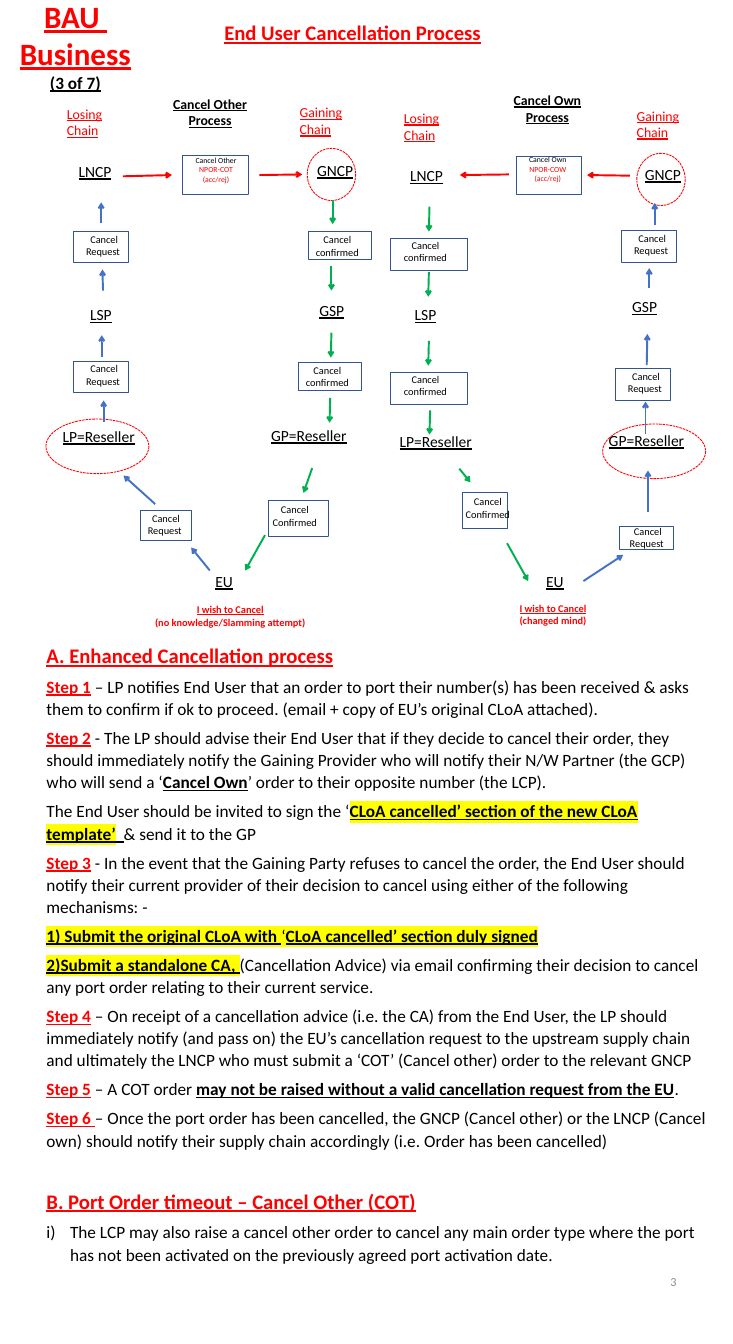
from lxml import etree
from pptx import Presentation
from pptx.dml.color import RGBColor
from pptx.enum.dml import MSO_LINE
from pptx.enum.shapes import MSO_CONNECTOR, MSO_SHAPE
from pptx.enum.text import MSO_ANCHOR, MSO_AUTO_SIZE, PP_ALIGN
from pptx.oxml.ns import qn
from pptx.util import Inches, Pt

LEFT, CENTER, RIGHT = PP_ALIGN.LEFT, PP_ALIGN.CENTER, PP_ALIGN.RIGHT
RECT, OVAL = MSO_SHAPE.RECTANGLE, MSO_SHAPE.OVAL
TOP, MIDDLE = MSO_ANCHOR.TOP, MSO_ANCHOR.MIDDLE
FONT = "Calibri"
COLORS = {"red": "FF0000", "black": "000000", "blue": "4472C4", "green": "00B050",
          "navy": "325491", "grey": "8C8C8C", "yellow": "FFFF00"}
HEAD = {"size": 24, "color": "red", "bold": True, "underline": True}
STEP = {"color": "red", "bold": True, "underline": True}
KEY = {"bold": True, "underline": True}
MARK = {**KEY, "highlight": "yellow"}

prs = Presentation()
prs.slide_width, prs.slide_height = Inches(11.81), Inches(21.65)
s = prs.slides.add_slide(prs.slide_layouts[6])


def add_text(box, paragraphs, align=CENTER, wrap=True, anchor=TOP, spacing=None, after=0, **base):
    """Each paragraph is a string or a list of (text, format) runs; base is the default format."""
    sp = s.shapes.add_textbox(*map(Inches, box))
    tf = sp.text_frame
    tf.word_wrap, tf.auto_size, tf.vertical_anchor = wrap, MSO_AUTO_SIZE.SHAPE_TO_FIT_TEXT, anchor
    for i, runs in enumerate(paragraphs):
        p = tf.paragraphs[0] if i == 0 else tf.add_paragraph()
        p.alignment = align
        if spacing:
            p.line_spacing, p.space_after = spacing, Pt(after)
        for text, extra in [(runs, {})] if isinstance(runs, str) else runs:
            fmt = {"size": 12, "color": "black", **base, **extra}
            r = p.add_run()
            r.text = text
            r.font.size = Pt(fmt["size"])
            r.font.bold = fmt.get("bold", False)
            r.font.underline = fmt.get("underline", False)
            r.font.color.rgb = RGBColor.from_string(COLORS[fmt["color"]])
            if "highlight" in fmt:
                mark = etree.SubElement(r.font._element, qn("a:highlight"))
                etree.SubElement(mark, qn("a:srgbClr"), val=COLORS[fmt["highlight"]])
            r.font.name = FONT
    return tf


def add_outline(kind, box, color, width):
    sp = s.shapes.add_shape(kind, *map(Inches, box))
    sp.shadow.inherit = False
    sp.fill.background()
    sp.line.color.rgb = RGBColor.from_string(COLORS[color])
    sp.line.width = Pt(width)
    return sp


# Headings
add_text((0.21, -0.09, 2.01, 1.65),
         ["BAU ", "Business", [("(3 of 7)", {"size": 20, "color": "black"})]],
         wrap=False, size=36, **STEP)
add_text((3.49, 0.27, 4.38, 0.5), ["End User Cancellation Process"], wrap=False, **HEAD)
for box, first in [((2.68, 1.49, 1.41, 0.64), "Cancel Other"),
                   ((8.17, 1.43, 1.3, 0.64), "Cancel Own")]:
    add_text(box, [first, "Process"], wrap=False, size=16, **KEY)
for x, y, w, side in [(0.98, 1.65, 0.78, "Losing"), (4.73, 1.63, 0.89, "Gaining"),
                      (6.41, 1.72, 0.78, "Losing"), (10.16, 1.68, 0.89, "Gaining")]:
    add_text((x, y, w, 0.64), [side, "Chain"], align=LEFT, wrap=False,
             size=16, color="red", underline=True)

# Parties in the supply chains
for x, y, w, h, party in [
        (1.17, 2.56, 0.74, 0.4, "LNCP"), (5.01, 2.54, 0.79, 0.4, "GNCP"),
        (6.51, 2.63, 0.74, 0.4, "LNCP"), (10.29, 2.61, 0.79, 0.4, "GNCP"),
        (0.91, 6.83, 1.38, 0.52, "LP=Reseller"), (4.27, 6.81, 1.43, 0.52, "GP=Reseller"),
        (6.34, 6.91, 1.38, 0.52, "LP=Reseller"), (9.71, 6.89, 1.43, 0.52, "GP=Reseller"),
        (3.37, 9.16, 0.49, 0.52, "EU"), (8.7, 9.16, 0.49, 0.52, "EU")]:
    add_text((x, y, w, h), [party], align=LEFT, wrap=False, size=18, underline=True)
for x, y, party in [(0.8, 4.87, "LSP"), (4.52, 4.8, "GSP"), (6.03, 4.87, "LSP"), (9.56, 4.74, "GSP")]:
    add_text((x, y, 1.65, 0.4), [party], size=18, underline=True)
for oval in [(0.74, 6.75, 1.66, 0.88), (9.71, 6.83, 1.66, 0.88),
             (4.95, 2.39, 0.78, 0.84), (10.26, 2.47, 0.78, 0.84)]:
    add_outline(OVAL, oval, "red", 1).line.dash_style = MSO_LINE.SQUARE_DOT

# Port order boxes
for box, label, order, code in [
        ((2.94, 2.5, 1.05, 0.62), (2.77, 2.46, 1.42, 0.72), "Cancel Other", "NPOR-COT"),
        ((8.32, 2.52, 1.05, 0.6), (8.2, 2.45, 1.25, 0.72), "Cancel Own", "NPOR-COW")]:
    add_outline(RECT, box, "navy", 0.25)
    add_text(label, [[(order, {"color": "black"})], code, "(acc/rej)"], size=9, color="red")

# Message boxes: text, box size, label offset and size, box positions
REQUEST, CONFIRMED, END_CONFIRMED = " Cancel Request", "Cancel confirmed", "Cancel Confirmed"
for text, (w, h), (dx, dy, lw, lh), places in [
        (REQUEST, (0.89, 0.51), (-0.15, -0.02, 1.26, 0.57),
         [(1.18, 3.72), (1.18, 5.81), (10.01, 3.71), (9.91, 5.93)]),
        (REQUEST, (0.82, 0.48), (-0.08, -0.02, 0.95, 0.5), [(2.26, 8.22)]),
        (REQUEST, (0.87, 0.38), (-0.06, -0.06, 1, 0.5), [(9.98, 8.47)]),
        (CONFIRMED, (1.01, 0.45), (0, -0.02, 0.93, 0.5), [(4.97, 3.73), (4.81, 5.83)]),
        (CONFIRMED, (1.23, 0.52), (0, -0.03, 1.13, 0.58), [(6.29, 3.83), (6.29, 5.99)]),
        (END_CONFIRMED, (0.96, 0.58), (-0.1, 0.01, 1.06, 0.5), [(4.32, 8.05)]),
        (END_CONFIRMED, (0.73, 0.58), (-0.08, 0, 1, 0.5), [(7.44, 7.93)])]:
    for x, y in places:
        add_outline(RECT, (x, y, w, h), "navy", 0.25)
        add_text((x + dx, y + dy, lw, lh), [text])

# Arrows: from x, from y, to x, to y
ARROWS = {
    "red": [(1.98, 2.84, 2.77, 2.82), (4.18, 2.82, 4.87, 2.81),
            (8.2, 2.81, 7.41, 2.82), (10.15, 2.83, 9.46, 2.82)],
    "blue": [(1.63, 3.6, 1.63, 3.26), (1.66, 4.68, 1.65, 4.34), (1.64, 5.75, 1.64, 5.4),
             (1.67, 6.8, 1.67, 6.45), (3.38, 9.19, 3.08, 8.82), (2.5, 8.12, 1.99, 7.66),
             (9.4, 9.36, 10.04, 8.94), (10.44, 8.24, 10.44, 7.58), (10.55, 3.62, 10.55, 3.27),
             (10.46, 4.64, 10.46, 4.32), (10.42, 5.88, 10.43, 5.38), (10.4, 6.99, 10.4, 6.47)],
    "green": [(5.36, 3.22, 5.36, 3.61), (5.34, 4.28, 5.34, 4.68), (5.34, 5.36, 5.33, 5.76),
              (5.32, 6.41, 5.31, 6.81), (5.03, 7.54, 4.89, 7.94), (4.27, 8.62, 3.95, 9.19),
              (6.92, 3.33, 6.91, 3.73), (6.91, 4.38, 6.9, 4.78), (6.91, 5.49, 6.9, 5.89),
              (6.93, 6.61, 6.92, 7), (7.4, 7.55, 7.58, 7.77), (8.17, 8.75, 8.51, 9.36)],
}
for color, arrows in ARROWS.items():
    for ends in arrows:
        arrow = s.shapes.add_connector(MSO_CONNECTOR.STRAIGHT, *map(Inches, ends))
        arrow.line.color.rgb = RGBColor.from_string(COLORS[color])
        arrow.line.width = Pt(2.25)
        spPr = arrow._element.spPr
        etree.SubElement(spPr.find(qn("a:ln")), qn("a:tailEnd"), type="arrow")
        etree.SubElement(spPr, qn("a:effectLst"))

# End user wishes
for box, reason in [((1.97, 9.67, 3.48, 0.65), "(no knowledge/Slamming attempt)"),
                    ((7.96, 9.65, 1.9, 0.65), "(changed mind)")]:
    add_text(box, [[("I wish to Cancel", {"underline": True})], reason], color="red", bold=True)

# Process description
tf = add_text((0.65, 10.28, 10.89, 10.68), [
    [("A. Enhanced Cancellation process", HEAD)],
    [("Step 1", STEP), (" – LP notifies End User that an order to port their number(s) has been received & asks them to confirm if ok to proceed. (email + copy of EU’s original CLoA attached).", {})],
    [("Step 2", STEP), (" - The LP should advise their End User that if they decide to cancel their order, they should immediately notify the Gaining Provider who will notify their N/W Partner (the GCP) who will send a ‘", {}),
     ("Cancel Own", KEY), ("’ order to their opposite number (the LCP).", {})],
    [("The End User should be invited to sign the ‘", {}),
     ("CLoA cancelled’ section of the new CLoA template’", MARK), ("  ", KEY), ("& send it to the GP", {})],
    [("Step 3", STEP), (" - In the event that the Gaining Party refuses to cancel the order, the End User should notify their current provider of their decision to cancel using either of the following mechanisms: -", {})],
    [("1) Submit the original CLoA with ", MARK), ("‘", {"highlight": "yellow"}),
     ("CLoA cancelled’ section duly signed", MARK)],
    [("2)Submit a standalone CA, ", MARK), ("(Cancellation Advice) via email confirming their decision to cancel any port order relating to their current service.", {})],
    [("Step 4", STEP), (" – On receipt of a cancellation advice (i.e. the CA) from the End User, the LP should immediately notify (and pass on) the EU’s cancellation request to the upstream supply chain and ultimately the LNCP who must submit a ‘COT’ (Cancel other) order to the relevant GNCP", {})],
    [("Step 5", STEP), (" – A COT order ", {}),
     ("may not be raised without a valid cancellation request from the EU", KEY), (".", {})],
    [("Step 6 ", STEP), ("– Once the port order has been cancelled, the GNCP (Cancel other) or the LNCP (Cancel own) should notify their supply chain accordingly (i.e. Order has been cancelled)", {})],
    [("B. Port Order timeout – Cancel Other (COT)", HEAD)],
    "The LCP may also raise a cancel other order to cancel any main order type where the port has not been activated on the previously agreed port activation date.",
], align=LEFT, spacing=1.07, after=8, size=20)
timeout_heading, timeout_item = tf.paragraphs[-2:]
timeout_heading.space_before = Pt(34)
pPr = timeout_item._p.get_or_add_pPr()
pPr.set("marL", str(Inches(0.38)))
pPr.set("indent", str(-Inches(0.38)))
etree.SubElement(pPr, qn("a:buFont"), typeface=FONT)
etree.SubElement(pPr, qn("a:buAutoNum"), type="romanLcParenR")

# Page number
add_text((8.34, 20.07, 2.66, 1.15), ["3"], align=RIGHT, anchor=MIDDLE, size=14.2, color="grey")

prs.save("out.pptx")
